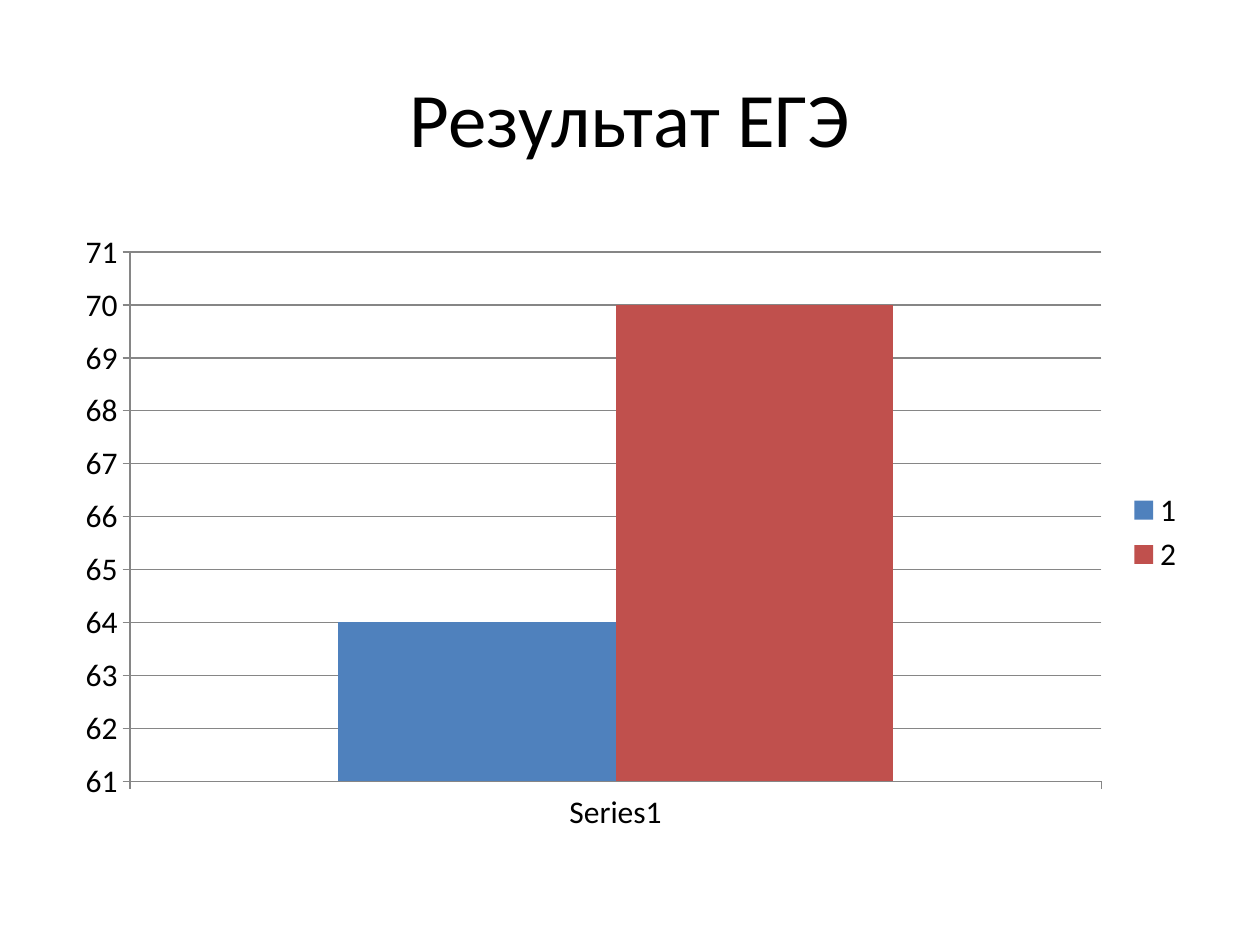
import pptx
import pptx.chart.data
import pptx.dml.color
import pptx.enum.chart
import pptx.enum.text
import pptx.util

TITLE = "Результат ЕГЭ"
CATEGORIES = ["Series1"]
SERIES = [("1", [64], "4F81BD"), ("2", [70], "C0504D")]
FONT = "Calibri"
BLACK = "000000"
GRAY = "868686"
WIDTH, HEIGHT = 10, 7.5
MARGIN = 0.05 * WIDTH
TITLE_TOP, TITLE_HEIGHT = 0.04 * HEIGHT, 1.25
CHART_TOP, CHART_HEIGHT = 1.75, 0.66 * HEIGHT


def color(value):
    return pptx.dml.color.RGBColor.from_string(value)


def format_font(font, size):
    font.name = FONT
    font.size = pptx.util.Pt(size)
    font.color.rgb = color(BLACK)


def write(box, text, size, align, anchor):
    frame = box.text_frame
    frame.word_wrap = True
    frame.vertical_anchor = anchor
    para = frame.paragraphs[0]
    para.alignment = align
    span = para.add_run()
    span.text = text
    format_font(span.font, size)


def area(top, height):
    return [pptx.util.Inches(n) for n in (MARGIN, top, WIDTH - 2 * MARGIN, height)]


def draw_line(line):
    line.color.rgb = color(GRAY)
    line.width = pptx.util.Pt(0.75)


def add_results(page):
    data = pptx.chart.data.CategoryChartData()
    data.categories = CATEGORIES
    for name, values, fill in SERIES:
        data.add_series(name, values)
    kind = pptx.enum.chart.XL_CHART_TYPE.COLUMN_CLUSTERED
    chart = page.shapes.add_chart(kind, *area(CHART_TOP, CHART_HEIGHT), data).chart
    format_font(chart.font, 18)
    chart.has_title = False
    chart.has_legend = True
    chart.legend.position = pptx.enum.chart.XL_LEGEND_POSITION.RIGHT
    chart.legend.include_in_layout = False

    plot = chart.plots[0]
    plot.gap_width = 150
    plot.overlap = 0
    plot.vary_by_categories = False
    for series, (name, values, fill) in zip(plot.series, SERIES):
        series.invert_if_negative = False
        series.format.fill.solid()
        series.format.fill.fore_color.rgb = color(fill)

    for axis in (chart.category_axis, chart.value_axis):
        axis.major_tick_mark = pptx.enum.chart.XL_TICK_MARK.OUTSIDE
        axis.minor_tick_mark = pptx.enum.chart.XL_TICK_MARK.NONE
        draw_line(axis.format.line)
    scale = chart.value_axis
    scale.minimum_scale, scale.maximum_scale, scale.major_unit = 61, 71, 1
    scale.has_major_gridlines = True
    draw_line(scale.major_gridlines.format.line)


def main():
    deck = pptx.Presentation()
    deck.slide_width = pptx.util.Inches(WIDTH)
    deck.slide_height = pptx.util.Inches(HEIGHT)
    page = deck.slides.add_slide(deck.slide_layouts[5])
    title = page.shapes.title
    title.left, title.top, title.width, title.height = area(TITLE_TOP, TITLE_HEIGHT)
    write(title, TITLE, size=44, align=pptx.enum.text.PP_ALIGN.CENTER,
          anchor=pptx.enum.text.MSO_ANCHOR.MIDDLE)
    add_results(page)
    deck.save("out.pptx")


if __name__ == "__main__":
    main()
